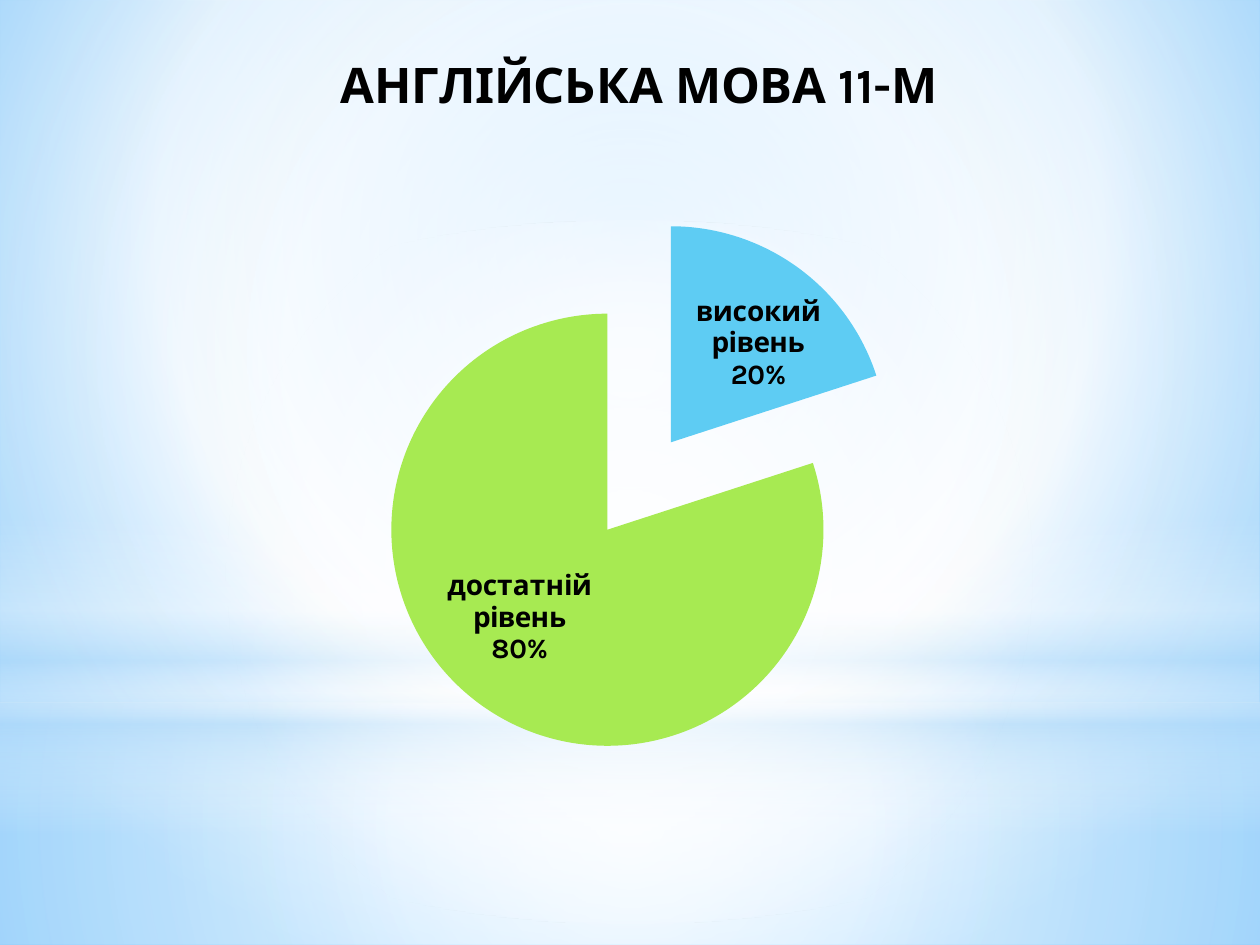
import copy

import lxml.etree
import pptx
import pptx.chart.data
import pptx.dml.color
import pptx.enum.chart
import pptx.enum.shapes
import pptx.oxml
import pptx.oxml.ns
import pptx.util

Cm = pptx.util.Cm
Pt = pptx.util.Pt
qn = pptx.oxml.ns.qn
RECT = pptx.enum.shapes.MSO_SHAPE.RECTANGLE
OVAL = pptx.enum.shapes.MSO_SHAPE.OVAL
FONT = "Karla"
WHITE, PALE = "FFFFFF", "B4DCFA"
MID = (50, 50, 50, 50)


def color(code):
    return pptx.dml.color.RGBColor.from_string(code)


def shade(fill, stops, focus=None):
    """Set a gradient of (place, colour, opacity) stops: round about focus, else downward."""
    fill.gradient()
    grad = fill._fill._gradFill
    for child in list(grad):
        grad.remove(child)
    items = lxml.etree.SubElement(grad, qn("a:gsLst"))
    for place, code, opaque in stops:
        stop = lxml.etree.SubElement(items, qn("a:gs"), pos=str(place * 1000))
        tint = lxml.etree.SubElement(stop, qn("a:srgbClr"), val=code)
        if opaque < 100:
            lxml.etree.SubElement(tint, qn("a:alpha"), val=str(opaque * 1000))
    if focus:
        ring = lxml.etree.SubElement(grad, qn("a:path"), path="circle")
        sides = {side: str(part * 1000) for side, part in zip("ltrb", focus)}
        lxml.etree.SubElement(ring, qn("a:fillToRect"), **sides)
    else:
        lxml.etree.SubElement(grad, qn("a:lin"), ang="5400000", scaled="0")


def glow(slide, kind, top, height, stops, focus=None):
    """Add a full-width soft shape."""
    shape = slide.shapes.add_shape(kind, 0, Cm(top), Cm(25.4), Cm(height))
    shape.shadow.inherit = False
    shape.line.fill.background()
    shade(shape.fill, stops, focus)


def style(font, size, bold):
    font.name = FONT
    font.size = Pt(size)
    font.bold = bold
    font.color.rgb = color("000000")


def layout(modes, **parts):
    """Make a manual layout; parts are percentages of the chart's size."""
    outer = lxml.etree.Element(qn("c:layout"))
    manual = lxml.etree.SubElement(outer, qn("c:manualLayout"))
    shares = {name: f"{part / 100:.4f}" for name, part in parts.items()}
    for name, val in {**modes, **shares}.items():
        lxml.etree.SubElement(manual, qn("c:" + name), val=val)
    return outer


def place(chart):
    """Fix the places of the title and the plot."""
    edge = {"xMode": "edge", "yMode": "edge"}
    title = chart.element.find(".//" + qn("c:title"))
    area = chart.element.find(".//" + qn("c:plotArea"))
    for part in (title, area):
        for old in part.findall(qn("c:layout")):
            part.remove(old)
    title.find(qn("c:tx")).addnext(layout(edge, x=23.6, y=0.9))
    inner = {"layoutTarget": "inner", **edge}
    area.insert(0, layout(inner, x=26.9, y=22.2, w=47.7, h=66.9))


def explode(chart, amount):
    series = chart.element.find(".//" + qn("c:ser"))
    gap = lxml.etree.Element(qn("c:explosion"), val=str(amount))
    series.find(qn("c:tx")).addnext(gap)


def shift(chart, moves):
    """Move single labels, by index, by percentages of the chart's size."""
    group = chart.element.find(".//" + qn("c:ser")).find(qn("c:dLbls"))
    shared = [part for part in group if part.tag != qn("c:showLeaderLines")]
    for spot, (index, (x, y)) in enumerate(moves.items()):
        label = lxml.etree.Element(qn("c:dLbl"))
        lxml.etree.SubElement(label, qn("c:idx"), val=str(index))
        label.append(layout({}, x=x, y=y))
        label.extend(copy.deepcopy(part) for part in shared)
        group.insert(spot, label)


def add_pie(slide):
    data = pptx.chart.data.CategoryChartData()
    data.categories = ["11-М", "високий рівень", "достатній рівень"]
    data.add_series("Series 1", [None, 20, 80])
    frame = slide.shapes.add_chart(
        pptx.enum.chart.XL_CHART_TYPE.PIE,
        Cm(1.3), Cm(0.74), Cm(22.83), Cm(16.28), data)
    chart = frame.chart
    style(chart.font, 10, False)
    chart.has_legend = False

    chart.has_title = True
    title = chart.chart_title
    title.include_in_layout = False
    title.text_frame.text = "АНГЛІЙСЬКА МОВА 11-М"
    style(title.text_frame.paragraphs[0].runs[0].font, 28, True)

    plot = chart.plots[0]
    plot.vary_by_categories = True
    series = plot.series[0]
    for i, code in enumerate(["4E67C8", "5ECCF3", "A7EA52"]):
        fill = series.points[i].format.fill
        fill.solid()
        fill.fore_color.rgb = color(code)
    explode(chart, 25)
    place(chart)

    labels = series.data_labels
    style(labels.font, 16, True)
    labels.show_value = False
    labels.show_category_name = True
    labels.show_percentage = True
    labels.number_format = "0%"
    labels.number_format_is_linked = False
    labels.position = pptx.enum.chart.XL_LABEL_POSITION.INSIDE_END
    shift(chart, {1: (2.4, 2.8), 2: (-3.3, -4.1)})


def add_scene(slide):
    shade(slide.background.fill,
          [(0, "9ED5FF", 100), (60, WHITE, 100), (100, "5BB9FF", 100)],
          (20, 10, 20, 60))
    glow(slide, RECT, 14.17, 4.88,
         [(0, WHITE, 91), (37, WHITE, 76), (100, PALE, 79)], MID)
    glow(slide, RECT, 0, 14.17,
         [(0, WHITE, 89), (48, WHITE, 62), (100, PALE, 79)], MID)
    glow(slide, RECT, 10.46, 6.35,
         [(0, WHITE, 0), (29, WHITE, 30), (45, PALE, 40),
          (55, WHITE, 26), (65, PALE, 60), (100, WHITE, 0)])
    glow(slide, OVAL, 4.45, 14.17, [(0, WHITE, 100), (56, WHITE, 0)], MID)


def main():
    deck = pptx.Presentation()
    deck.slide_width, deck.slide_height = Cm(25.4), Cm(19.05)
    slide = deck.slides.add_slide(deck.slide_layouts[6])
    add_scene(slide)
    add_pie(slide)
    deck.save("out.pptx")


if __name__ == "__main__":
    main()
